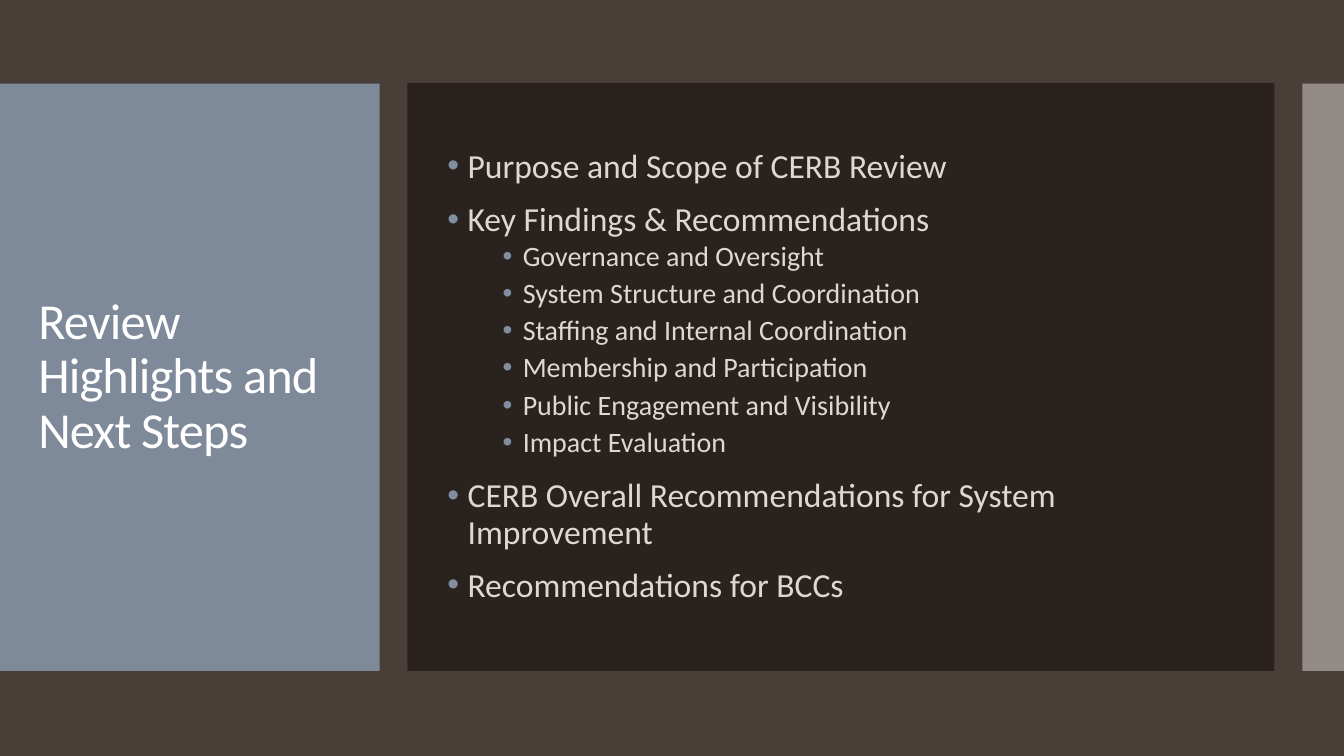
from pptx import Presentation
from pptx.dml.color import RGBColor
from pptx.enum.shapes import MSO_SHAPE as Preset
from pptx.enum.text import MSO_ANCHOR as Anchor, MSO_AUTO_SIZE as AutoSize, PP_ALIGN as Align
from pptx.oxml.ns import qn
from pptx.util import Cm, Pt
from lxml.etree import SubElement

BROWN = RGBColor(0x4A, 0x3F, 0x38)
DARK = RGBColor(0x25, 0x1F, 0x1C)
SLATE = RGBColor(0x81, 0x8E, 0x9F)
SAND = RGBColor(0xDE, 0xD8, 0xD4)
WHITE = RGBColor(0xFF, 0xFF, 0xFF)
FONT = "Calibri"

TITLE = "Review Highlights and Next Steps"
AGENDA = [
    (0, "Purpose and Scope of CERB Review"),
    (0, "Key Findings & Recommendations"),
    (1, "Governance and Oversight"),
    (1, "System Structure and Coordination"),
    (1, "Staffing and Internal Coordination"),
    (1, "Membership and Participation"),
    (1, "Public Engagement and Visibility"),
    (1, "Impact Evaluation"),
    (0, "CERB Overall Recommendations for System Improvement"),
    (0, "Recommendations for BCCs"),
]
LEVELS = [
    {"size": 24, "margin": 0.51, "before": 12, "after": 0},
    {"size": 20, "margin": 1.9, "before": 2.5, "after": 2.5},
]


def add_panel(slide, left, top, width, height, colour, opacity):
    panel = slide.shapes.add_shape(
        Preset.RECTANGLE, Cm(left), Cm(top), Cm(width), Cm(height))
    panel.shadow.inherit = False
    panel.line.fill.background()
    panel.fill.solid()
    panel.fill.fore_color.rgb = colour
    tint = panel._element.spPr.find(".//" + qn("a:srgbClr"))
    SubElement(tint, qn("a:alpha")).set("val", str(opacity * 1000))


def place(holder, left, top, width, height):
    holder.left, holder.top = Cm(left), Cm(top)
    holder.width, holder.height = Cm(width), Cm(height)
    frame = holder.text_frame
    frame.word_wrap = True
    frame.auto_size = AutoSize.NONE
    frame.vertical_anchor = Anchor.MIDDLE
    tree = holder._element.getparent()
    tree.append(holder._element)
    return frame


def style_runs(paragraph, size, colour):
    paragraph.alignment = Align.LEFT
    paragraph.line_spacing = 0.9
    for run in paragraph.runs:
        run.font.name = FONT
        run.font.size = Pt(size)
        run.font.color.rgb = colour


def add_bullet(paragraph, margin):
    props = paragraph._p.get_or_add_pPr()
    props.set("marL", str(Cm(margin)))
    props.set("indent", str(-Cm(0.51)))
    colour = SubElement(props, qn("a:buClr"))
    SubElement(colour, qn("a:srgbClr")).set("val", str(SLATE))
    SubElement(props, qn("a:buFont")).set("typeface", "Arial")
    SubElement(props, qn("a:buChar")).set("char", "•")


def fill_title(frame):
    frame.text = TITLE
    heading = frame.paragraphs[0]
    style_runs(heading, 36, WHITE)
    heading.runs[0]._r.get_or_add_rPr().set("spc", "-60")


def fill_agenda(frame):
    for index, (level, wording) in enumerate(AGENDA):
        topic = frame.add_paragraph() if index else frame.paragraphs[0]
        look = LEVELS[level]
        topic.text = wording
        topic.level = level
        add_bullet(topic, look["margin"])
        topic.space_before = Pt(look["before"] if index else 0)
        topic.space_after = Pt(look["after"])
        style_runs(topic, look["size"], SAND)


def main():
    deck = Presentation()
    deck.slide_width, deck.slide_height = Cm(33.87), Cm(19.05)
    slide = deck.slides.add_slide(deck.slide_layouts[1])
    slide.background.fill.solid()
    slide.background.fill.fore_color.rgb = BROWN

    add_panel(slide, 0, 2.11, 9.57, 14.8, SLATE, 95)
    add_panel(slide, 10.27, 2.09, 21.85, 14.82, DARK, 88)
    add_panel(slide, 32.82, 2.11, 1.05, 14.8, WHITE, 40)

    fill_title(place(slide.shapes.title, 0.71, 3.12, 8.18, 12.78))
    fill_agenda(place(slide.placeholders[1], 11.02, 2.69, 20.32, 13.61))
    deck.save("out.pptx")


if __name__ == "__main__":
    main()
